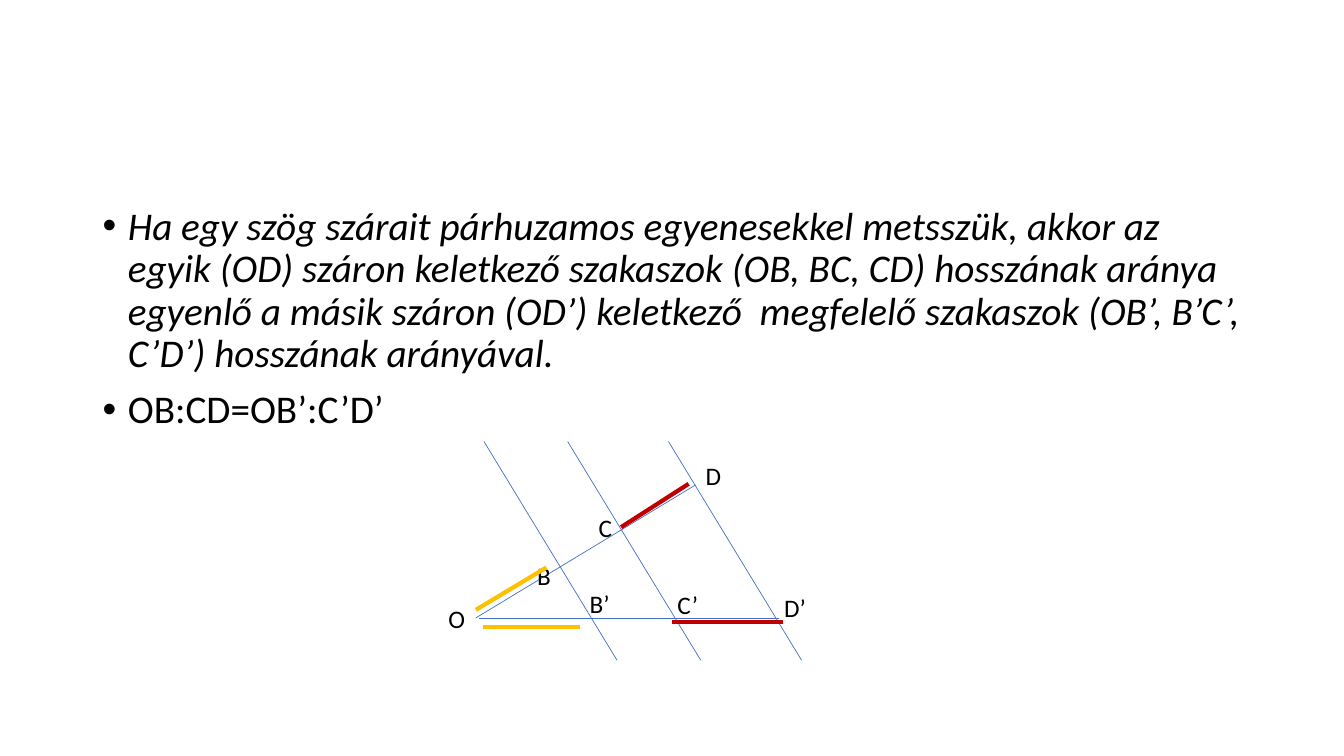
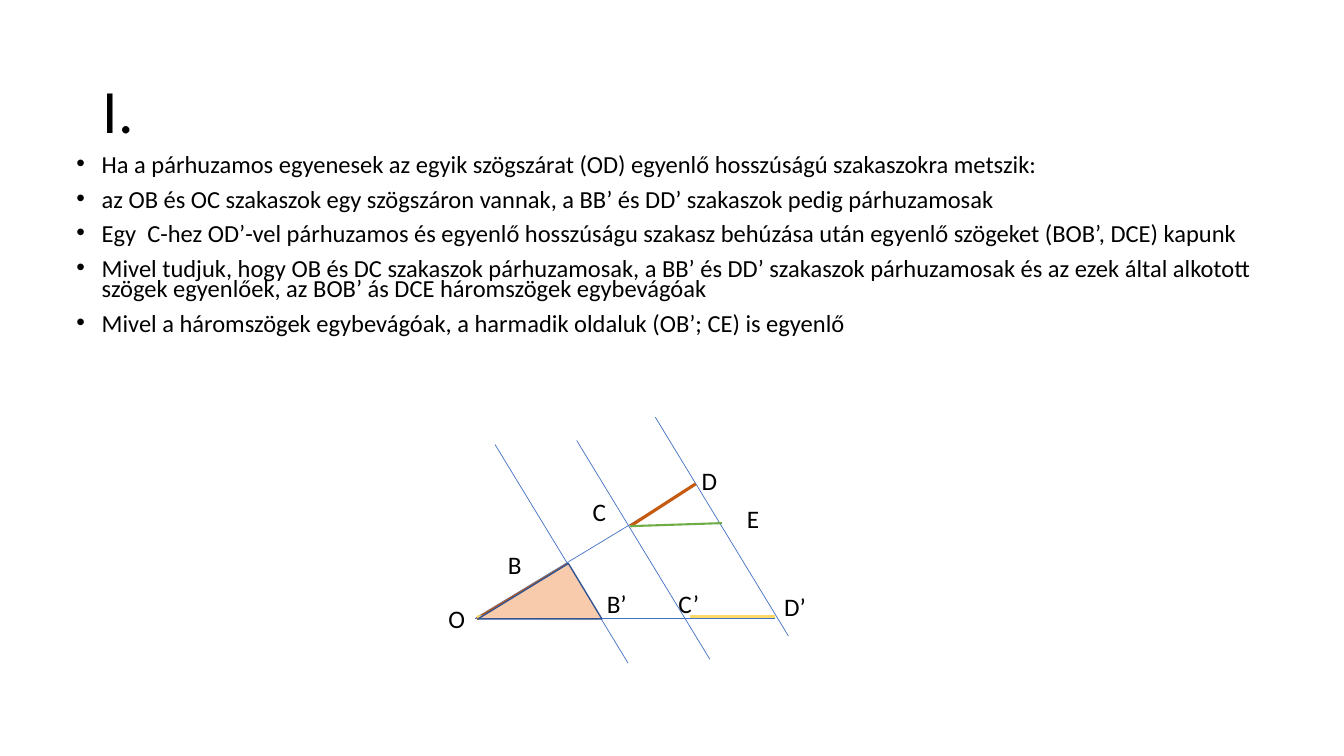
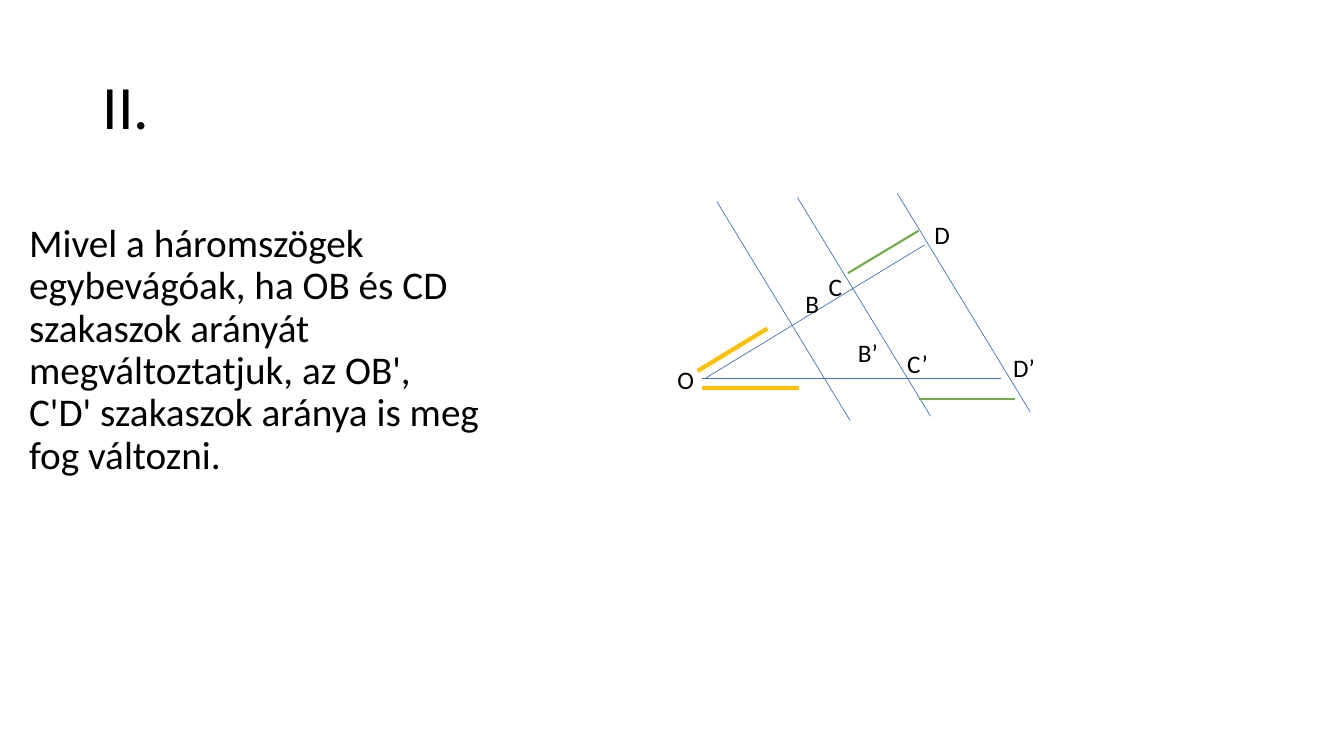
from lxml import etree
from pptx import Presentation
from pptx.dml.color import RGBColor
from pptx.enum.shapes import MSO_CONNECTOR as CONN, MSO_SHAPE as SHAPE
from pptx.enum.text import MSO_ANCHOR as ANCHOR
from pptx.oxml.ns import qn
from pptx.util import Emu, Pt

PX = 9144  # one hundredth of an inch
COLORS = {
    "text": "000000", "blue": "4472C4", "navy": "325491", "gold": "FFC000",
    "red": "C00000", "rust": "C55A11", "sand": "FFD966", "peach": "F8CBAD",
    "green": "70AD47",
}
FONT = "Calibri"
LABEL_SIZE = (60, 40)


def px(*lengths):
    return [Emu(n * PX) for n in lengths]


def rgb(name):
    return RGBColor.from_string(COLORS[name])


class Deck:
    def __init__(self):
        self.prs = Presentation()
        self.prs.slide_width, self.prs.slide_height = px(1333, 750)
        self.s = None

    def slide(self):
        self.s = self.prs.slides.add_slide(self.prs.slide_layouts[6])

    def text(self, box, lines, size, italic=()):
        """Add a text box; italic holds the indexes of slanted paragraphs."""
        tf = self.s.shapes.add_textbox(*px(*box)).text_frame
        tf.word_wrap = True
        tf.text = "\n".join(lines)
        for i, p in enumerate(tf.paragraphs):
            font = p.runs[0].font
            font.name, font.size, font.italic = FONT, Pt(size), i in italic
            font.color.rgb = rgb("text")
        return tf

    def title(self, top, text):
        tf = self.text((92, top, 1150, 145), [text], 44)
        tf.vertical_anchor = ANCHOR.MIDDLE
        tf.paragraphs[0].line_spacing = 0.9

    def body(self, box, lines, size=28, spacing=0.9, bullets=True, italic=()):
        tf = self.text(box, lines, size, italic)
        for p in tf.paragraphs:
            p.line_spacing, p.space_before = spacing, Pt(10)
            if bullets:
                pPr = p._p.get_or_add_pPr()
                indent = 25 * PX
                pPr.set("marL", str(indent))
                pPr.set("indent", str(-indent))
                etree.SubElement(pPr, qn("a:buFont")).set("typeface", "Arial")
                etree.SubElement(pPr, qn("a:buChar")).set("char", "•")

    def labels(self, points):
        for name, corner in points.items():
            self.text(corner + LABEL_SIZE, [name], 18)

    def line(self, x1, y1, x2, y2, color="blue", width=0.5):
        c = self.s.shapes.add_connector(CONN.STRAIGHT, *px(x1, y1, x2, y2))
        c.line.color.rgb, c.line.width = rgb(color), Pt(width)
        etree.SubElement(c._element.spPr, qn("a:effectLst"))

    def parallels(self, *tops):
        for x, y in tops:
            self.line(x, y, x + 132, y + 217)

    def triangle(self, box, apex):
        sp = self.s.shapes.add_shape(SHAPE.ISOSCELES_TRIANGLE, *px(*box))
        sp.adjustments[0] = apex
        sp.shadow.inherit = False
        sp.fill.solid()
        sp.fill.fore_color.rgb = rgb("peach")
        sp.line.color.rgb, sp.line.width = rgb("navy"), Pt(1)


def ratio_slide(d):
    d.slide()
    d.body((92, 200, 1150, 476), [
        "Ha egy szög szárait párhuzamos egyenesekkel metsszük, akkor az egyik "
        "(OD) száron keletkező szakaszok (OB, BC, CD) hosszának aránya egyenlő "
        "a másik száron (OD’) keletkező  megfelelő szakaszok (OB’, B’C’, C’D’) "
        "hosszának arányával.",
        "OB:CD=OB’:C’D’",
    ], italic=(0,))
    d.parallels((480, 438), (563, 438), (663, 438))
    d.line(690, 481, 472, 613)
    d.line(773, 613, 475, 613)
    d.labels({"O": (435, 594), "B": (523, 551), "C": (584, 503), "D": (690, 452),
              "B’": (575, 579), "C’": (662, 580), "D’": (768, 583)})
    d.line(542, 563, 472, 605, "gold", 3)
    d.line(777, 617, 667, 617, "red", 3)
    d.line(575, 622, 479, 622, "gold", 3)
    d.line(683, 480, 616, 523, "red", 3)


def congruence_slide(d):
    d.slide()
    d.title(40, "I.")
    d.body((66, 151, 1235, 217), [
        "Ha a párhuzamos egyenesek az egyik szögszárat (OD) egyenlő hosszúságú "
        "szakaszokra metszik:",
        "az OB és OC szakaszok egy szögszáron vannak, a BB’ és DD’ szakaszok "
        "pedig párhuzamosak",
        "Egy  C-hez OD’-vel párhuzamos és egyenlő hosszúságu szakasz behúzása "
        "után egyenlő szögeket (BOB’, DCE) kapunk",
        "Mivel tudjuk, hogy OB és DC szakaszok párhuzamosak, a BB’ és DD’ "
        "szakaszok párhuzamosak és az ezek által alkotott szögek egyenlőek, "
        "az BOB’ ás DCE háromszögek egybevágóak",
        "Mivel a háromszögek egybevágóak, a harmadik oldaluk (OB’; CE) is egyenlő",
    ], size=17.5, spacing=0.7)
    d.line(690, 481, 472, 613)
    d.line(769, 613, 471, 613)
    d.parallels((491, 441), (572, 437), (650, 414))
    d.labels({"O": (435, 594), "B": (494, 540), "C": (578, 487), "D": (686, 457),
              "E": (731, 494), "B’": (592, 579), "C’": (663, 579),
              "D’": (768, 582)})
    d.line(690, 480, 625, 522, "rust", 2.25)
    d.line(563, 560, 473, 614, "rust", 2.25)
    d.line(769, 612, 684, 612, "sand", 2.25)
    d.line(592, 613, 473, 612, "sand", 2.25)
    d.triangle((474, 559, 123, 55), 0.73)
    d.line(625, 522, 716, 519, "green", 1.5)


def change_slide(d):
    d.slide()
    d.title(36, "II.")
    d.body((19, 217, 468, 476), [
        "Mivel a háromszögek egybevágóak, ha OB és CD szakaszok arányát "
        "megváltoztatjuk, az OB', C'D' szakaszok aránya is meg fog változni.",
    ], bullets=False)
    d.parallels((711, 200), (791, 196), (890, 192))
    d.line(917, 243, 700, 375)
    d.line(993, 375, 696, 375)
    d.labels({"O": (662, 357), "B": (789, 281), "C": (812, 264), "D": (917, 213),
              "B’": (841, 330), "C’": (890, 341), "D’": (995, 345)})
    d.line(792, 385, 696, 385, "gold", 3)
    d.line(1007, 396, 911, 396, "green", 1.5)
    d.line(911, 229, 841, 271, "green", 1.5)
    d.line(761, 326, 692, 368, "gold", 3)


def main():
    d = Deck()
    ratio_slide(d)
    congruence_slide(d)
    change_slide(d)
    d.prs.save("out.pptx")


if __name__ == "__main__":
    main()
